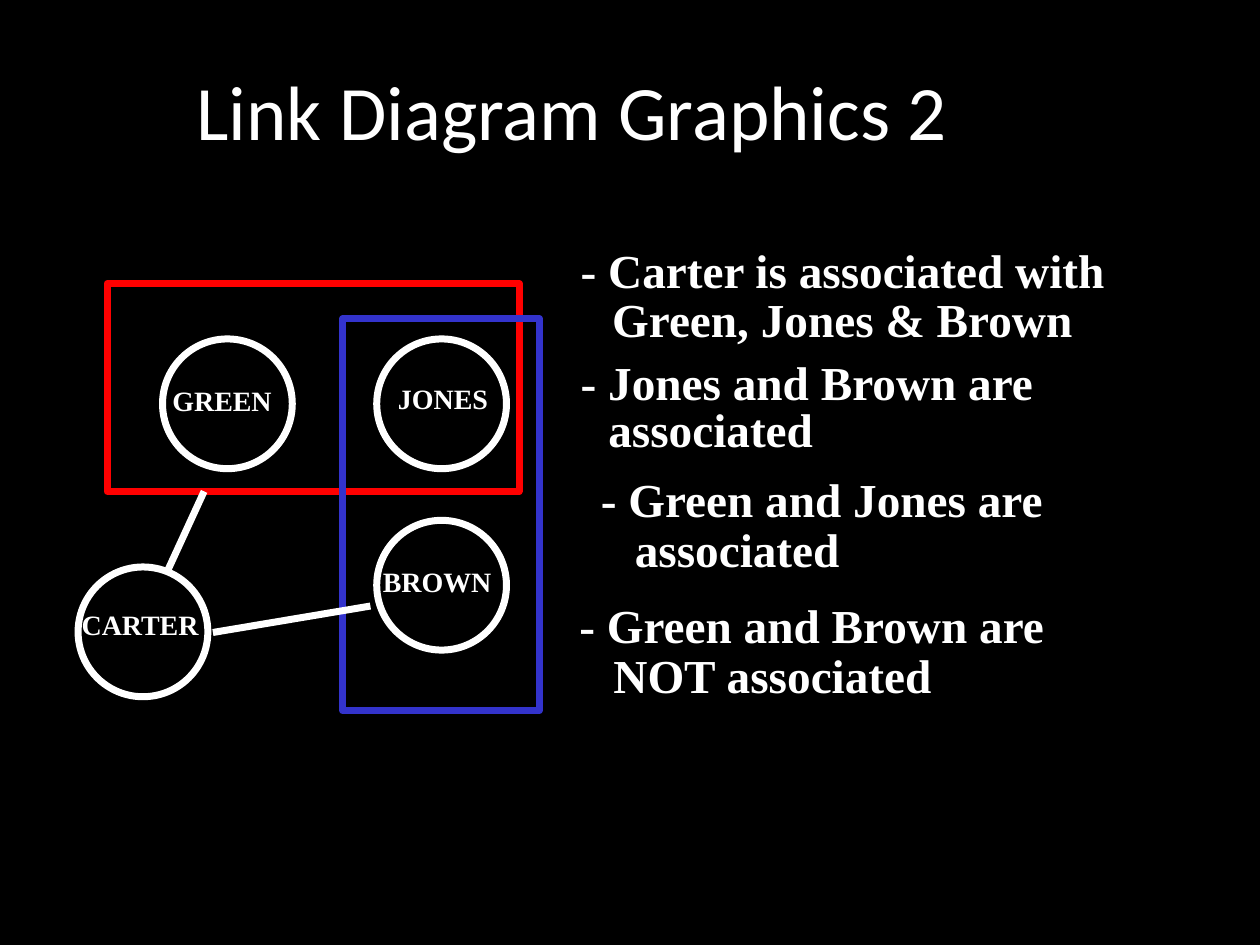
from dataclasses import dataclass

from lxml.etree import SubElement
from pptx import Presentation
from pptx.dml.color import RGBColor
from pptx.enum.shapes import MSO_CONNECTOR, MSO_SHAPE
from pptx.enum.text import MSO_ANCHOR, PP_ALIGN
from pptx.oxml.ns import qn
from pptx.util import Inches, Pt

WHITE, BLACK, RED, BLUE = "FFFFFF", "000000", "FF0000", "3333CC"
SERIF = "Times New Roman"
LINE_WIDTH = Pt(4)
DIAMETER = 1.03


@dataclass
class Group:
    left: float
    top: float
    width: float
    height: float
    color: str


@dataclass
class Label:
    text: str
    left: float
    top: float
    width: float


@dataclass
class Person:
    left: float
    top: float
    label: Label


@dataclass
class Link:
    start: tuple[float, float]
    end: tuple[float, float]


GROUPS = [
    Group(0.85, 2.25, 3.27, 1.65, RED),
    Group(2.72, 2.53, 1.56, 3.11, BLUE),
]
PEOPLE = [
    Person(0.62, 4.5, Label("CARTER", 0.55, 4.81, 1.14)),
    Person(2.99, 2.69, Label("JONES", 3.06, 3.02, 0.92)),
    Person(1.29, 2.69, Label("GREEN", 1.27, 3.03, 0.99)),
    Person(2.99, 4.13, Label("BROWN", 2.94, 4.47, 1.06)),
]
LINKS = [
    Link((1.69, 5.02), (2.94, 4.81)),
    Link((1.33, 4.53), (1.62, 3.9)),
]
STATEMENT_LINES = [
    Label("- Carter is associated with", 4.51, 1.93, 4.4),
    Label("Green, Jones & Brown", 4.76, 2.32, 3.89),
    Label("- Jones and Brown are", 4.51, 2.82, 3.83),
    Label("associated", 4.73, 3.19, 1.84),
    Label("- Green and Jones are", 4.67, 3.75, 3.74),
    Label("associated", 4.94, 4.14, 1.84),
    Label("- Green and Brown are", 4.5, 4.75, 3.93),
    Label("NOT associated", 4.77, 5.14, 2.75),
]


def rgb(color: str) -> RGBColor:
    return RGBColor.from_string(color)


def write(tf, text: str, font: str, size: float, bold: bool = False) -> None:
    """Fill a text frame with one left-aligned white paragraph."""
    tf.text = text
    tf.vertical_anchor = MSO_ANCHOR.MIDDLE
    p = tf.paragraphs[0]
    p.alignment = PP_ALIGN.LEFT
    p.line_spacing = 0.85
    p.font.name = font
    p.font.size = Pt(size)
    p.font.bold = bold
    p.font.color.rgb = rgb(WHITE)


def add_title(s, text: str) -> None:
    title = s.shapes.title
    title.left, title.top = Inches(0), Inches(0.3)
    title.width, title.height = Inches(9), Inches(1.25)
    title.text_frame.margin_left = Inches(1.56)
    write(title.text_frame, text, "Calibri", 44)


def add_outline(s, preset, left: float, top: float, width: float,
                height: float, color: str) -> None:
    sp = s.shapes.add_shape(preset, Inches(left), Inches(top),
                            Inches(width), Inches(height))
    sp.shadow.inherit = False
    sp.fill.background()
    sp.line.color.rgb = rgb(color)
    sp.line.width = LINE_WIDTH


def add_label(s, label: Label, size: float, height: float) -> None:
    box = s.shapes.add_textbox(Inches(label.left), Inches(label.top),
                               Inches(label.width), Inches(height))
    box.text_frame.word_wrap = False
    write(box.text_frame, label.text, SERIF, size, bold=True)


def add_person(s, person: Person) -> None:
    add_outline(s, MSO_SHAPE.OVAL, person.left, person.top,
                DIAMETER, DIAMETER, WHITE)
    add_label(s, person.label, 16, 0.33)


def add_link(s, link: Link) -> None:
    points = [Inches(v) for v in (*link.start, *link.end)]
    line = s.shapes.add_connector(MSO_CONNECTOR.STRAIGHT, *points)
    line.line.color.rgb = rgb(WHITE)
    line.line.width = LINE_WIDTH
    SubElement(line._element.spPr, qn("a:effectLst"))


def main() -> None:
    prs = Presentation()
    prs.slide_width, prs.slide_height = Inches(10), Inches(7.5)
    s = prs.slides.add_slide(prs.slide_layouts[5])
    s.background.fill.solid()
    s.background.fill.fore_color.rgb = rgb(BLACK)

    add_title(s, "Link Diagram Graphics 2")
    for g in GROUPS:
        add_outline(s, MSO_SHAPE.RECTANGLE, g.left, g.top,
                    g.width, g.height, g.color)
    for person in PEOPLE:
        add_person(s, person)
    for link in LINKS:
        add_link(s, link)
    for line in STATEMENT_LINES:
        add_label(s, line, 27, 0.49)

    prs.save("out.pptx")


if __name__ == "__main__":
    main()
